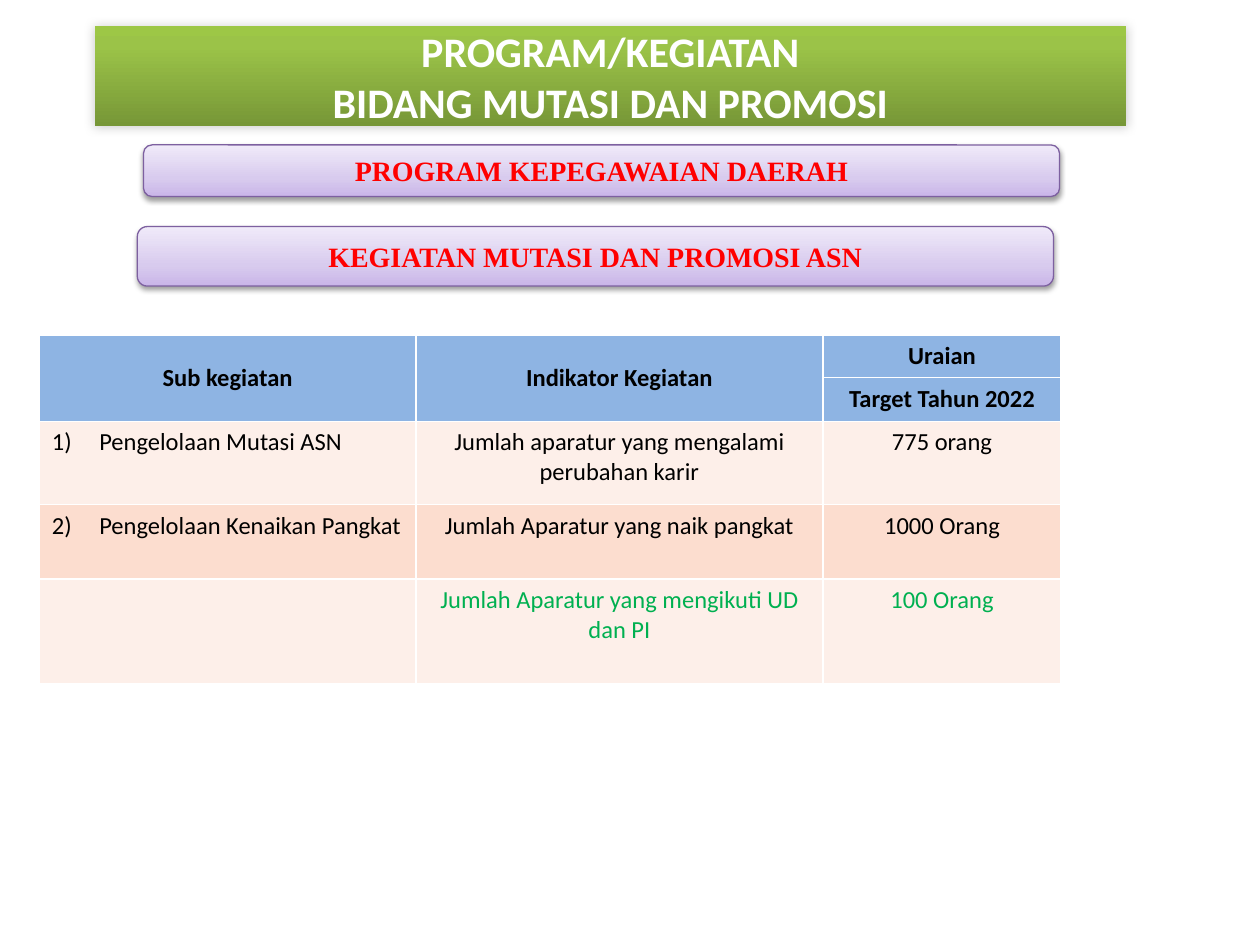
from lxml.etree import SubElement
from pptx import Presentation
from pptx.dml.color import RGBColor
from pptx.enum.shapes import MSO_SHAPE
from pptx.enum.text import MSO_ANCHOR, MSO_AUTO_SIZE, PP_ALIGN
from pptx.oxml.ns import qn
from pptx.util import Pt

COLORS = {
    "white": "FFFFFF", "black": "000000", "red": "FF0000", "green": "00B050",
    "purple": "7D60A0", "header": "8EB4E3", "light": "FDEFE9", "dark": "FCDDCF",
}
# Gradient stops run from the bottom edge to the top: (percent, colour)
GREEN_STOPS = [(0, "779737"), (80, "9BC348"), (100, "9DC746")]
PURPLE_STOPS = [(0, "C9B5E8"), (35, "D8CBEE"), (100, "F0EAF9")]

HEADING = "PROGRAM/KEGIATAN\vBIDANG MUTASI DAN PROMOSI"
BANNERS = [  # text, left, top, width, height
    ("PROGRAM KEPEGAWAIAN DAERAH", 82, 82.8, 523.5, 29.5),
    ("KEGIATAN MUTASI DAN PROMOSI ASN", 78.5, 129.5, 523.5, 34),
]
HEADERS = ["Sub kegiatan", "Indikator Kegiatan", "Uraian"]
SUBHEADER = "Target Tahun 2022"
ACTIVITIES = [  # sub-activity, indicator, target, text colour
    ("Pengelolaan Mutasi ASN", "Jumlah aparatur yang mengalami perubahan karir",
     "775 orang", "black"),
    ("Pengelolaan Kenaikan Pangkat", "Jumlah Aparatur yang naik pangkat",
     "1000 Orang", "black"),
    ("", "Jumlah Aparatur yang mengikuti UD dan PI", "100 Orang", "green"),
]
COLUMN_WIDTHS = [215.2, 232.6, 136.1]
ROW_HEIGHTS = [24, 25, 47.5, 42.5, 59.8]
TABLE_LEFT, TABLE_TOP = 22.5, 191.5
NUMBER_INDENT = 27


def rgb(name):
    return RGBColor.from_string(COLORS[name])


def format_text(frame, size, font_name, color, bold=True, align=PP_ALIGN.CENTER):
    for paragraph in frame.paragraphs:
        paragraph.alignment = align
        font = paragraph.font
        font.size, font.name, font.bold = Pt(size), font_name, bold
        font.color.rgb = rgb(color)


def fill_gradient(shape, stops):
    shape.fill.gradient()
    shape.fill.gradient_angle = 90
    stop_list = shape.element.spPr.find(qn("a:gradFill")).find(qn("a:gsLst"))
    for old_stop in list(stop_list):
        stop_list.remove(old_stop)
    for percent, color in stops:
        stop = SubElement(stop_list, qn("a:gs"), pos=str(percent * 1000))
        SubElement(stop, qn("a:srgbClr"), val=color)


def add_shadow(shape, opacity, blur, distance, direction):
    shape.shadow.inherit = False
    effects = shape.element.spPr.find(qn("a:effectLst"))
    shadow = SubElement(effects, qn("a:outerShdw"), blurRad=str(Pt(blur)),
                        dist=str(Pt(distance)), dir=str(direction * 60000),
                        algn="ctr", rotWithShape="0")
    color = SubElement(shadow, qn("a:srgbClr"), val=COLORS["black"])
    SubElement(color, qn("a:alpha"), val=str(opacity * 1000))


def number_paragraph(paragraph, number):
    properties = paragraph._p.get_or_add_pPr()
    properties.set("marL", str(Pt(NUMBER_INDENT)))
    properties.set("indent", str(-Pt(NUMBER_INDENT)))
    SubElement(properties, qn("a:buAutoNum"), type="arabicParenR", startAt=str(number))


def write_cell(cell, text, fill, color="black", bold=False,
               align=PP_ALIGN.CENTER, anchor=MSO_ANCHOR.TOP):
    cell.fill.solid()
    cell.fill.fore_color.rgb = rgb(fill)
    cell.vertical_anchor = anchor
    cell.text = text
    format_text(cell.text_frame, 14, "Calibri", color, bold, align)


def add_heading(slide):
    heading = slide.shapes.title
    heading.left, heading.top, heading.width, heading.height = map(Pt, (54, 15, 589.5, 57))
    fill_gradient(heading, GREEN_STOPS)
    add_shadow(heading, 20, 6, 0, 315)
    frame = heading.text_frame
    frame.text = HEADING
    frame.auto_size = MSO_AUTO_SIZE.NONE
    frame.vertical_anchor = MSO_ANCHOR.MIDDLE
    format_text(frame, 24, "Calibri", "white")


def add_activity_table(slide):
    table = slide.shapes.add_table(
        len(ROW_HEIGHTS), len(COLUMN_WIDTHS), Pt(TABLE_LEFT), Pt(TABLE_TOP),
        Pt(sum(COLUMN_WIDTHS)), Pt(sum(ROW_HEIGHTS))).table
    for column, width in zip(table.columns, COLUMN_WIDTHS):
        column.width = Pt(width)
    for row, height in zip(table.rows, ROW_HEIGHTS):
        row.height = Pt(height)

    for index, header in enumerate(HEADERS):
        write_cell(table.cell(0, index), header, "header", bold=True,
                   anchor=MSO_ANCHOR.MIDDLE)
    write_cell(table.cell(1, 2), SUBHEADER, "header", bold=True)
    for index in (0, 1):
        table.cell(0, index).merge(table.cell(1, index))

    for number, (activity, indicator, target, color) in enumerate(ACTIVITIES, 1):
        fill = "light" if number % 2 else "dark"
        cells = table.rows[number + 1].cells
        write_cell(cells[0], activity, fill, color, align=PP_ALIGN.LEFT)
        if activity:
            number_paragraph(cells[0].text_frame.paragraphs[0], number)
        write_cell(cells[1], indicator, fill, color)
        write_cell(cells[2], target, fill, color)


def add_banner(slide, text, *box):
    banner = slide.shapes.add_shape(MSO_SHAPE.ROUNDED_RECTANGLE, *map(Pt, box))
    fill_gradient(banner, PURPLE_STOPS)
    banner.line.color.rgb = rgb("purple")
    banner.line.width = Pt(0.75)
    add_shadow(banner, 38, 3.1, 1.6, 90)
    banner.text_frame.text = text
    banner.text_frame.vertical_anchor = MSO_ANCHOR.MIDDLE
    format_text(banner.text_frame, 16, "Times New Roman", "red")


def main():
    presentation = Presentation()
    presentation.slide_width, presentation.slide_height = Pt(720), Pt(540)
    slide = presentation.slides.add_slide(presentation.slide_layouts[5])
    add_heading(slide)
    add_activity_table(slide)
    for banner in BANNERS:
        add_banner(slide, *banner)
    presentation.save("out.pptx")


if __name__ == "__main__":
    main()
